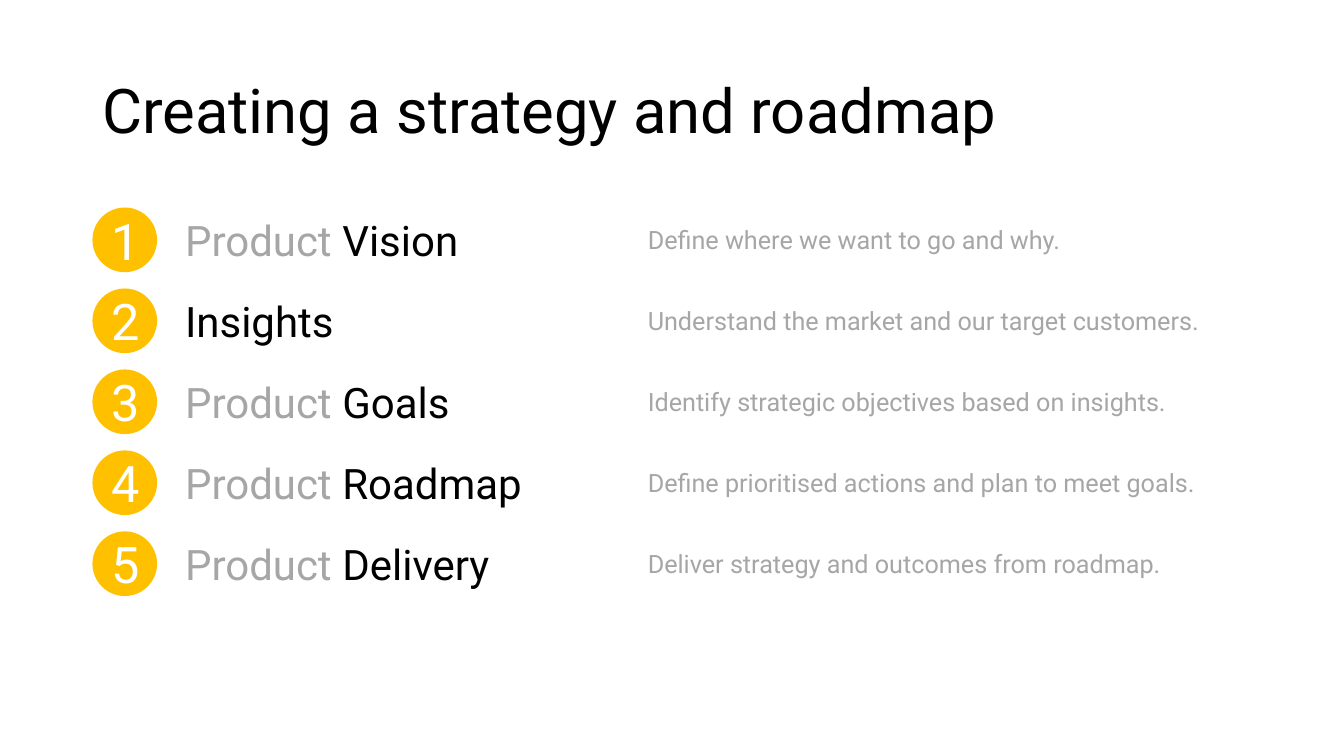
from pptx import Presentation
from pptx.dml.color import RGBColor
from pptx.enum.shapes import MSO_SHAPE
from pptx.enum.text import MSO_ANCHOR, PP_ALIGN
from pptx.util import Cm, Pt

OVAL = MSO_SHAPE.OVAL
MIDDLE = MSO_ANCHOR.MIDDLE
LEFT, CENTER = PP_ALIGN.LEFT, PP_ALIGN.CENTER

FONT = "Roboto"
BLACK, GREY, WHITE, AMBER = "000000", "A6A6A6", "FFFFFF", "FFC000"

TITLE = "Creating a strategy and roadmap"
# Grey lead-in, black keyword, description
STEPS = [
    ("Product ", "Vision", "Define where we want to go and why."),
    ("", "Insights", "Understand the market and our target customers."),
    ("Product ", "Goals", "Identify strategic objectives based on insights."),
    ("Product ", "Roadmap", "Define prioritised actions and plan to meet goals."),
    ("Product ", "Delivery", "Deliver strategy and outcomes from roadmap."),
]

# Lengths in centimetres
PAGE_WIDTH, PAGE_HEIGHT = 33.87, 19.05
MARGIN = 2.33
TITLE_TOP, TITLE_WIDTH, TITLE_HEIGHT = 1.01, 29.21, 3.68
ROW_HEIGHT = 2.04
NAMES_TOP, NAME_COLUMNS = 5.08, (2.08, 11.66)
DESCRIPTIONS_TOP, DESCRIPTION_COLUMNS = 5.06, (15.47,)
CIRCLE_TOP, CIRCLE_SIZE = 5.23, 1.63


def color(value):
    return RGBColor.from_string(value)


def write(frame, *spans, size, align=LEFT, line_spacing=None):
    """Fill the first paragraph with (text, colour) spans."""
    para = frame.paragraphs[0]
    para.alignment = align
    para.line_spacing = line_spacing
    for text, tint in spans:
        if text:
            span = para.add_run()
            span.text = text
            span.font.name = FONT
            span.font.size = Pt(size)
            span.font.color.rgb = color(tint)


def add_plain_table(page, left, top, columns):
    """Add a table with one row per step and no fills."""
    frame = page.shapes.add_table(
        len(STEPS), len(columns), Cm(left), Cm(top),
        Cm(sum(columns)), Cm(ROW_HEIGHT * len(STEPS)))
    table = frame.table
    table.first_row = table.horz_banding = False
    for column, width in zip(table.columns, columns):
        column.width = Cm(width)
    for row in table.rows:
        row.height = Cm(ROW_HEIGHT)
    for cell in table.iter_cells():
        cell.fill.background()
        cell.vertical_anchor = MIDDLE
    return table


def add_title(page):
    box = page.shapes.add_textbox(
        Cm(MARGIN), Cm(TITLE_TOP), Cm(TITLE_WIDTH), Cm(TITLE_HEIGHT))
    frame = box.text_frame
    frame.word_wrap = True
    frame.vertical_anchor = MIDDLE
    write(frame, (TITLE, BLACK), size=44, line_spacing=0.9)


def add_number(page, index):
    circle = page.shapes.add_shape(
        OVAL, Cm(MARGIN), Cm(CIRCLE_TOP + index * ROW_HEIGHT),
        Cm(CIRCLE_SIZE), Cm(CIRCLE_SIZE))
    circle.shadow.inherit = False
    circle.fill.solid()
    circle.fill.fore_color.rgb = color(AMBER)
    circle.line.fill.background()
    frame = circle.text_frame
    frame.vertical_anchor = MIDDLE
    write(frame, (str(index + 1), WHITE), size=36, align=CENTER)


def main():
    deck = Presentation()
    deck.slide_width, deck.slide_height = Cm(PAGE_WIDTH), Cm(PAGE_HEIGHT)
    page = deck.slides.add_slide(deck.slide_layouts[6])

    descriptions = add_plain_table(
        page, MARGIN + sum(NAME_COLUMNS), DESCRIPTIONS_TOP, DESCRIPTION_COLUMNS)
    add_title(page)
    names = add_plain_table(page, MARGIN, NAMES_TOP, NAME_COLUMNS)
    for index, (lead, keyword, description) in enumerate(STEPS):
        write(descriptions.cell(index, 0).text_frame, (description, GREY), size=18)
        write(names.cell(index, 1).text_frame,
              (lead, GREY), (keyword, BLACK), size=30)
        add_number(page, index)

    deck.save("out.pptx")


if __name__ == "__main__":
    main()
